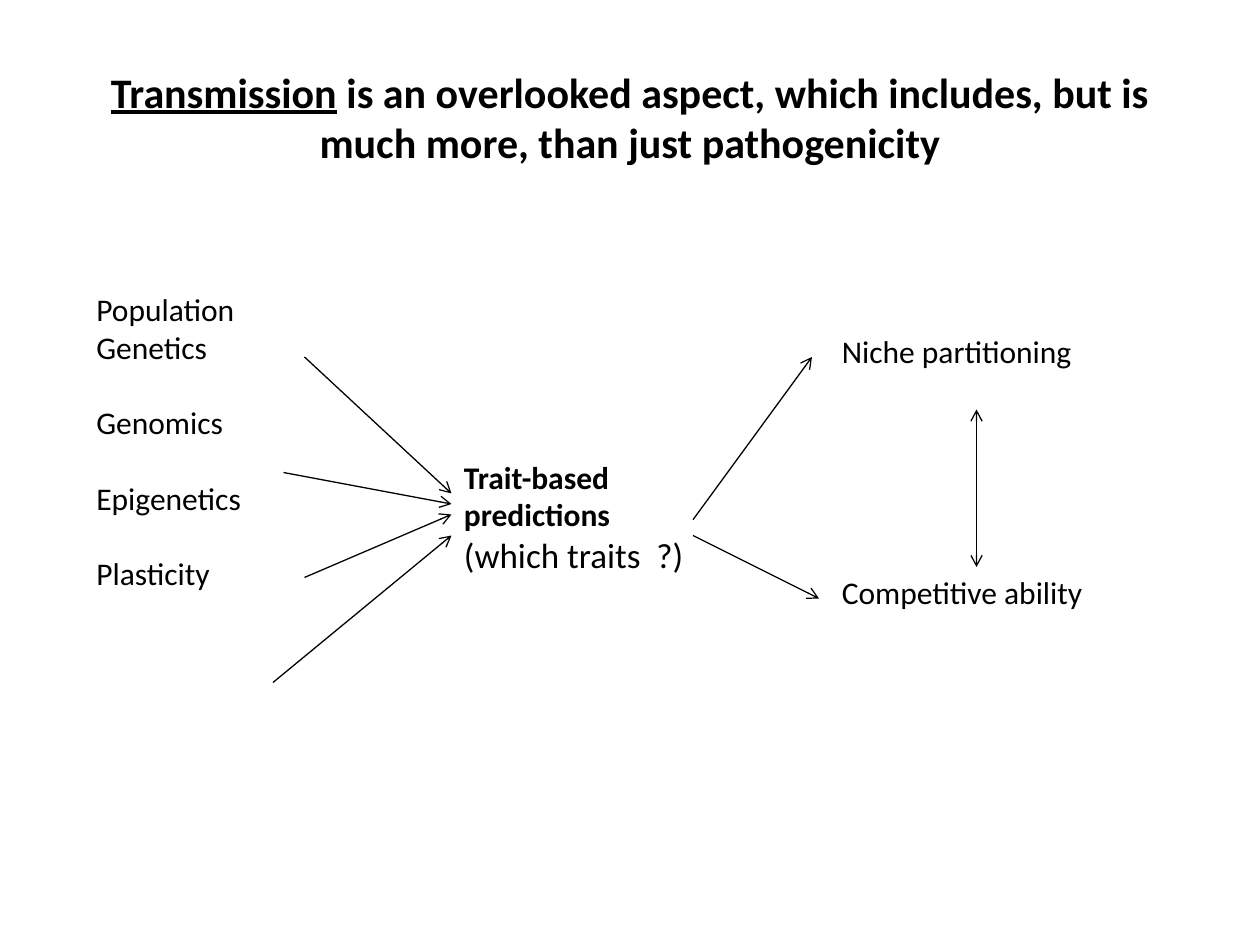
from lxml import etree
from pptx import Presentation
from pptx.dml.color import RGBColor
from pptx.enum.shapes import MSO_CONNECTOR
from pptx.enum.text import MSO_ANCHOR, MSO_AUTO_SIZE, PP_ALIGN
from pptx.oxml.ns import qn
from pptx.util import Pt

LEFT, CENTER = PP_ALIGN.LEFT, PP_ALIGN.CENTER
TOP, MIDDLE = MSO_ANCHOR.TOP, MSO_ANCHOR.MIDDLE
FIT, FIXED = MSO_AUTO_SIZE.SHAPE_TO_FIT_TEXT, MSO_AUTO_SIZE.NONE
STRAIGHT = MSO_CONNECTOR.STRAIGHT


def rgb(value):
    return RGBColor.from_string(value)


class Deck:
    font = "Calibri"
    ink = "000000"
    size = 18
    line_width = 0.75

    def __init__(self, width, height):
        self.prs = Presentation()
        self.prs.slide_width, self.prs.slide_height = Pt(width), Pt(height)
        self.s = self.prs.slides.add_slide(self.prs.slide_layouts[6])

    def text(self, box, paragraphs, align=LEFT, anchor=TOP, wrap=True, fit=FIT, gaps=()):
        """Paragraphs are lists of (text, style) runs; gaps are spaces before."""
        sp = self.s.shapes.add_textbox(*map(Pt, box))
        tf = sp.text_frame
        tf.word_wrap, tf.auto_size, tf.vertical_anchor = wrap, fit, anchor
        for i, runs in enumerate(paragraphs):
            p = tf.paragraphs[0] if i == 0 else tf.add_paragraph()
            p.alignment = align
            if gaps and gaps[i]:
                p.space_before = Pt(gaps[i])
            for words, style in runs:
                r = p.add_run()
                r.text = words
                r.font.name = self.font
                r.font.size = Pt(style.get("size", self.size))
                r.font.bold = style.get("bold", False)
                r.font.underline = style.get("underline", False)
                r.font.color.rgb = rgb(self.ink)

    def arrow(self, start, end, both=False):
        cx = self.s.shapes.add_connector(STRAIGHT, *map(Pt, (*start, *end)))
        cx.line.color.rgb = rgb(self.ink)
        cx.line.width = Pt(self.line_width)
        ln = cx.line._get_or_add_ln()
        for tag in ("a:headEnd", "a:tailEnd") if both else ("a:tailEnd",):
            etree.SubElement(ln, qn(tag), type="arrow")
        etree.SubElement(cx._element.spPr, qn("a:effectLst"))


def main():
    deck = Deck(720, 540)
    bold = {"bold": True}
    heading = {"size": 24, "bold": True}

    deck.text((36, 21.6, 648, 90), [[
        ("Transmission", {**heading, "underline": True}),
        (" is an overlooked aspect, which includes, but is much more, "
         "than just pathogenicity", heading),
    ]], CENTER, MIDDLE, fit=FIXED)

    sources = ["Population", "Genetics", "Genomics", "Epigenetics", "Plasticity"]
    blank_line = 21.6
    deck.text((48, 162, 127.5, 298), [[(name, {})] for name in sources],
              gaps=[0, 0] + [blank_line] * 3)

    traits_left = 258
    for start, end_y in [((174, 204), 282), ((162, 270), 288),
                         ((174, 330), 294), ((156, 390), 306)]:
        deck.arrow(start, (traits_left, end_y))

    deck.text((traits_left, 258, 142, 89), [
        [("Trait-based", bold)],
        [("predictions", bold)],
        [("(which traits  ?)", {"size": 20})],
    ], wrap=False)

    outcome_left = 474
    deck.arrow((396, 297), (464, 204))
    deck.text((outcome_left, 186, 191.5, 36.5), [[("Niche partitioning", {})]], wrap=False)
    deck.arrow((396, 306), (468, 342))
    deck.text((outcome_left, 324, 258, 36.5), [[("Competitive ability", {})]])
    deck.arrow((558, 234), (558, 324), both=True)

    deck.prs.save("out.pptx")


if __name__ == "__main__":
    main()
